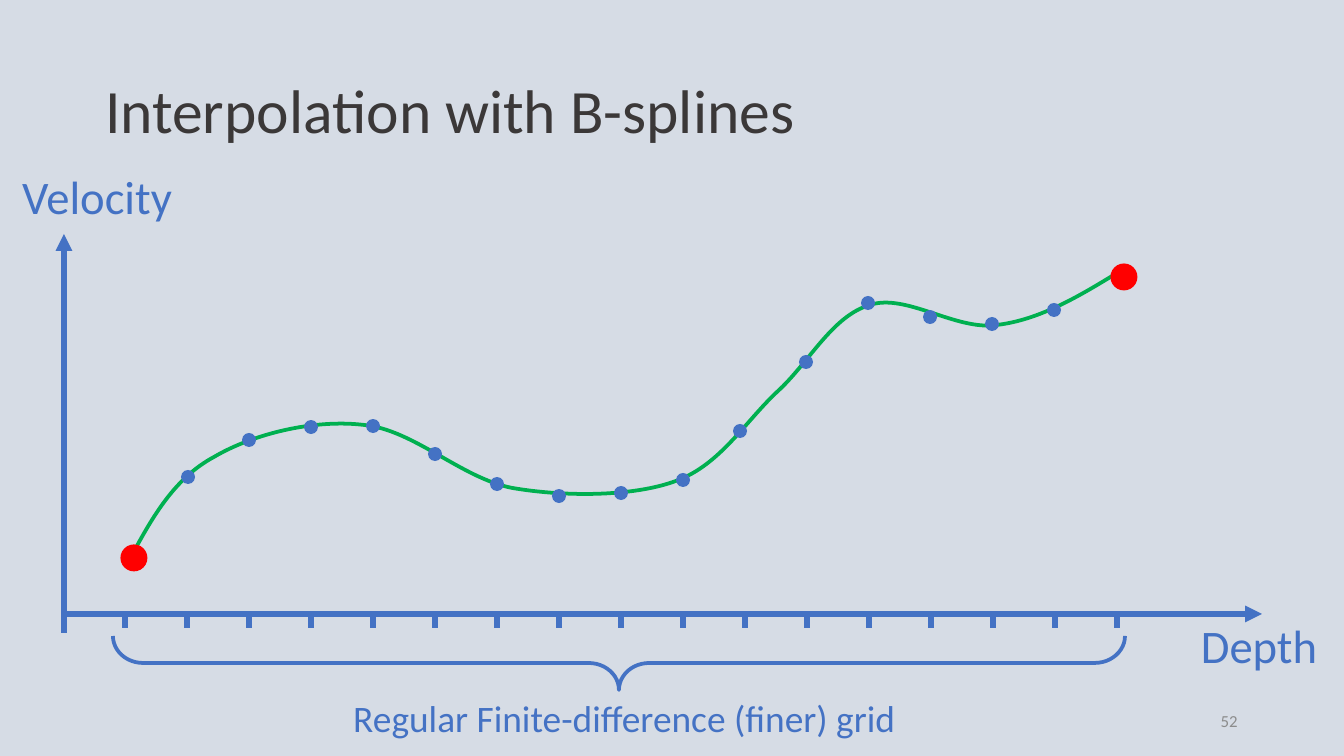
from lxml import etree
from pptx import Presentation
from pptx.dml.color import RGBColor
from pptx.enum.shapes import MSO_CONNECTOR, MSO_SHAPE
from pptx.enum.text import MSO_ANCHOR, MSO_AUTO_SIZE, PP_ALIGN
from pptx.oxml.ns import qn
from pptx.util import Pt

STRAIGHT = MSO_CONNECTOR.STRAIGHT
ELLIPSE, LEFT_BRACE = MSO_SHAPE.OVAL, MSO_SHAPE.LEFT_BRACE
TOP, MIDDLE = MSO_ANCHOR.TOP, MSO_ANCHOR.MIDDLE
LEFT, CENTER, RIGHT = PP_ALIGN.LEFT, PP_ALIGN.CENTER, PP_ALIGN.RIGHT
FIXED, GROW = MSO_AUTO_SIZE.NONE, MSO_AUTO_SIZE.SHAPE_TO_FIT_TEXT

BACKGROUND = RGBColor(0xD6, 0xDC, 0xE5)
BLUE = RGBColor(0x44, 0x72, 0xC4)
GREEN = RGBColor(0x00, 0xB0, 0x50)
RED = RGBColor(0xFF, 0x00, 0x00)
DARK = RGBColor(0x3B, 0x38, 0x38)
GRAY = RGBColor(0x8C, 0x8C, 0x8C)

EMU_PER_PX = 914400 / 134.4
FONT = "Calibri"

# Axes and grid
ORIGIN_X, AXIS_Y = 64, 614
GRID_START, GRID_STEP, GRID_COUNT, TICK_LENGTH = 125, 62, 17, 14

# Spline: a start point, then two control points and an end point per segment
SPLINE_START = (132, 555)
SPLINE_SEGMENTS = [
    ((153, 516), (175, 478), (214, 457)),
    ((253, 434), (314, 419), (364, 425)),
    ((414, 430), (461, 478), (512, 488)),
    ((564, 497), (633, 497), (676, 481)),
    ((720, 465), (745, 422), (777, 392)),
    ((809, 363), (832, 316), (870, 305)),
    ((906, 293), (956, 331), (997, 325)),
    ((1039, 320), (1078, 297), (1117, 273)),
]

GRID_SAMPLES = [
    (188, 477), (249, 440), (311, 427), (373, 426), (435, 454),
    (497, 484), (559, 496), (621, 493), (683, 480), (740, 431),
    (806, 362), (868, 303), (930, 317), (992, 324), (1054, 310),
]
END_POINTS = [(134, 558), (1124, 277)]


def px(length):
    return round(length * EMU_PER_PX)


def add_text(slide, text, box, size, color, align=LEFT, anchor=TOP,
             wrap=True, fit=FIXED, line_spacing=None):
    frame = slide.shapes.add_textbox(*map(px, box)).text_frame
    frame.word_wrap = wrap
    frame.auto_size = fit
    frame.vertical_anchor = anchor
    paragraph = frame.paragraphs[0]
    paragraph.alignment = align
    paragraph.line_spacing = line_spacing
    run = paragraph.add_run()
    run.text = text
    run.font.name = FONT
    run.font.size = Pt(size)
    run.font.color.rgb = color


def add_line(slide, start, end, arrow=False):
    line = slide.shapes.add_connector(STRAIGHT, *map(px, start + end))
    line.line.color.rgb = BLUE
    line.line.width = Pt(3)
    if arrow:
        outline = line.line._get_or_add_ln()
        etree.SubElement(outline, qn("a:tailEnd"), type="triangle")
    etree.SubElement(line._element.spPr, qn("a:effectLst"))


def style_outline(shape, color):
    shape.shadow.inherit = False
    shape.fill.background()
    shape.line.color.rgb = color
    shape.line.width = Pt(2)


def add_dot(slide, center, diameter, color):
    x, y = center
    dot = slide.shapes.add_shape(
        ELLIPSE, px(x - diameter / 2), px(y - diameter / 2),
        px(diameter), px(diameter))
    dot.shadow.inherit = False
    dot.fill.solid()
    dot.fill.fore_color.rgb = color
    dot.line.fill.background()


def add_spline(slide):
    knots = [SPLINE_START] + [segment[-1] for segment in SPLINE_SEGMENTS]
    left, top = (min(values) for values in zip(*knots))
    builder = slide.shapes.build_freeform(*SPLINE_START, scale=EMU_PER_PX)
    builder.add_line_segments(knots[1:], close=False)
    spline = builder.convert_to_shape()
    style_outline(spline, GREEN)

    # Turn each straight segment into a cubic curve
    straight_segments = list(spline._element.iter(qn("a:lnTo")))
    for straight, segment in zip(straight_segments, SPLINE_SEGMENTS):
        curve = etree.Element(qn("a:cubicBezTo"))
        for x, y in segment:
            etree.SubElement(curve, qn("a:pt"), x=str(x - left),
                             y=str(y - top))
        straight.getparent().replace(straight, curve)


def add_axes(slide):
    add_line(slide, (ORIGIN_X, 633), (ORIGIN_X, 234), arrow=True)
    add_text(slide, "Velocity", (-26, 161, 246, 70), 25, BLUE,
             align=CENTER, fit=GROW)
    add_text(slide, "Depth", (1136, 610, 246, 70), 25, BLUE,
             align=CENTER, fit=GROW)
    for index in range(GRID_COUNT):
        x = GRID_START + index * GRID_STEP
        add_line(slide, (x, AXIS_Y), (x, AXIS_Y + TICK_LENGTH))
    add_line(slide, (ORIGIN_X, AXIS_Y), (1262, AXIS_Y), arrow=True)


def add_grid_brace(slide):
    brace = slide.shapes.add_shape(LEFT_BRACE, *map(px, (592, 157, 54, 1012)))
    brace.rotation = 270
    brace.adjustments[0] = 0.56
    brace.adjustments[1] = 0.5
    style_outline(brace, BLUE)


def main():
    presentation = Presentation()
    presentation.slide_width = px(1344)
    presentation.slide_height = px(756)
    slide = presentation.slides.add_slide(presentation.slide_layouts[6])
    slide.background.fill.solid()
    slide.background.fill.fore_color.rgb = BACKGROUND

    # Curve, title and slide number
    add_spline(slide)
    add_text(slide, "Interpolation with B-splines", (92, 41, 1159, 146), 33,
             DARK, anchor=MIDDLE, line_spacing=0.9)
    add_text(slide, "52", (949, 701, 302, 40), 9, GRAY,
             align=RIGHT, anchor=MIDDLE)

    # Axes with the regular grid
    add_axes(slide)

    # Interpolated samples, grid label and end points
    for center in GRID_SAMPLES:
        add_dot(slide, center, 14, BLUE)
    add_text(slide, "Regular Finite-difference (finer) grid",
             (340, 689, 577, 59), 20, BLUE, wrap=False, fit=GROW)
    add_grid_brace(slide)
    for center in END_POINTS:
        add_dot(slide, center, 27, RED)

    presentation.save("out.pptx")


if __name__ == "__main__":
    main()
